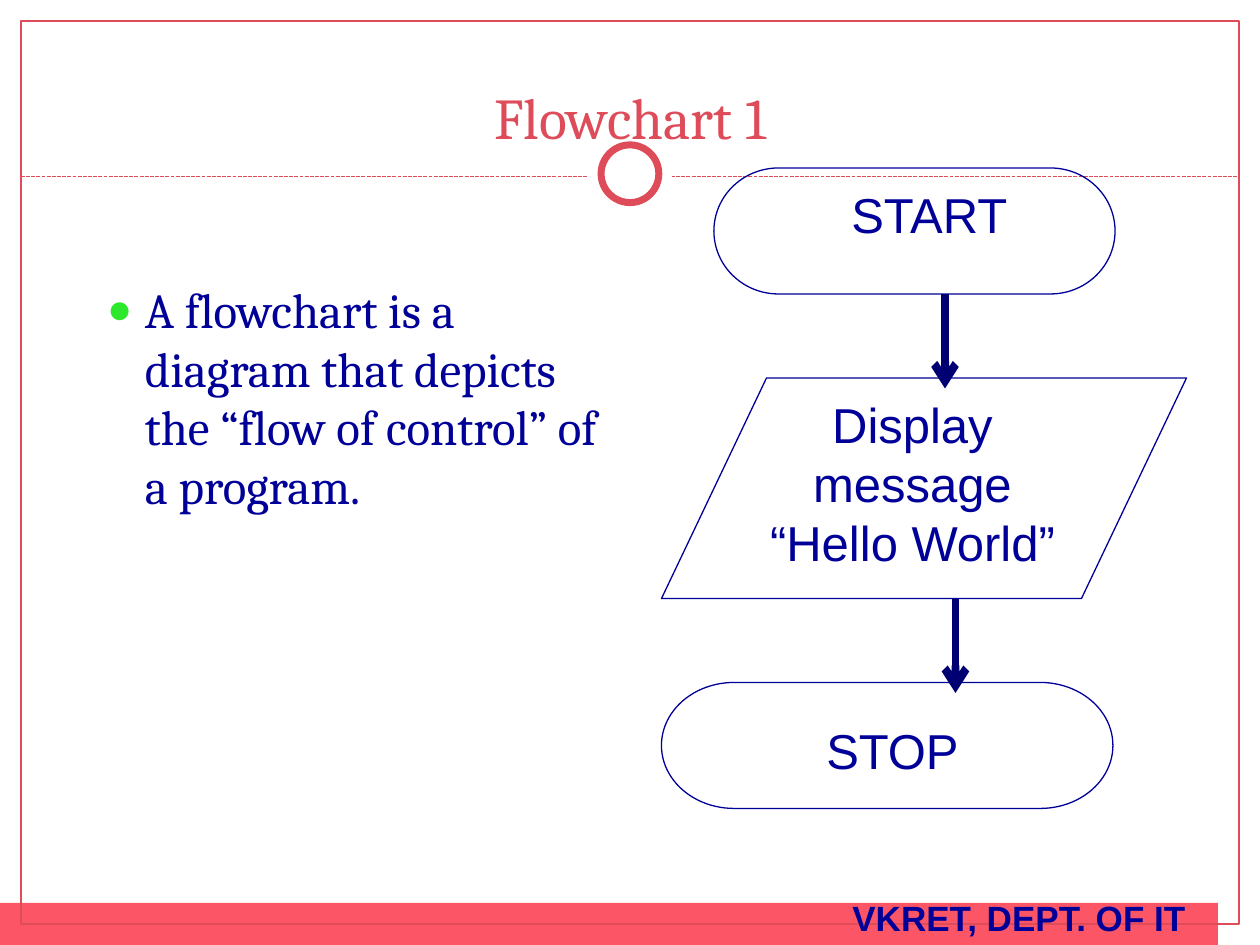
"""Build the "Flowchart 1" slide on a grid of 120 columns by 90 rows."""
import pptx
import pptx.util
import pptx.dml.color
import pptx.enum.dml
import pptx.enum.shapes
import pptx.enum.text
import pptx.oxml
import pptx.oxml.ns

RGBColor = pptx.dml.color.RGBColor
WHITE = RGBColor(0xFF, 0xFF, 0xFF)
RED = RGBColor(0xDE, 0x4C, 0x5A)
BAND = RGBColor(0xFC, 0x56, 0x66)
BLUE = RGBColor(0x00, 0x00, 0x99)
NAVY = RGBColor(0x00, 0x00, 0x72)

MSO = pptx.enum.shapes.MSO_SHAPE
STRAIGHT = pptx.enum.shapes.MSO_CONNECTOR.STRAIGHT
ANCHOR = pptx.enum.text.MSO_ANCHOR
ALIGN = pptx.enum.text.PP_ALIGN
NS = pptx.oxml.ns.nsdecls("a")

prs = pptx.Presentation()
prs.slide_width, prs.slide_height = pptx.util.Inches(10), pptx.util.Inches(7.5)
CELL = prs.slide_width / 120
s = prs.slides.add_slide(prs.slide_layouts[1])
title, body = s.placeholders


def grid(*cells):
    return [round(c * CELL) for c in cells]


def write(sp, text, font, align=ALIGN.LEFT, anchor=ANCHOR.TOP):
    tf = sp.text_frame
    frame = {"word_wrap": True, "vertical_anchor": anchor,
             "auto_size": pptx.enum.text.MSO_AUTO_SIZE.NONE}
    for name, value in frame.items():
        setattr(tf, name, value)
    p = tf.paragraphs[0]
    p.alignment = align
    r = p.add_run()
    r.text = text
    for name, value in font.items():
        if name == "color":
            r.font.color.rgb = value
        else:
            setattr(r.font, name, pptx.util.Pt(value) if name == "size" else value)
    return p


shapes = [
    (MSO.RECTANGLE, (0, 0, 120, 18.2), WHITE, None, 0),
    (MSO.RECTANGLE, (0, 0, 2, 90), WHITE, None, 0),
    (MSO.RECTANGLE, (118, 0, 2, 90), WHITE, None, 0),
    (MSO.RECTANGLE, (0, 86, 116, 4), BAND, None, 0),
    (MSO.RECTANGLE, (2, 2, 116, 86), None, RED, 0.75),
    ("dashed", (2, 16.8, 118, 16.8), None, RED, 0.75),
    (MSO.OVAL, (56, 12.6, 8, 8), WHITE, None, 0),
    (MSO.OVAL, (57.25, 13.8, 5.5, 5.5), WHITE, RED, 4),
    (MSO.FLOWCHART_TERMINATOR, (68, 16, 38.2, 12), None, BLUE, 0.75),
    (MSO.FLOWCHART_DATA, (63, 36, 50, 21), None, BLUE, 0.75),
    (MSO.FLOWCHART_TERMINATOR, (63, 65, 43, 12), None, BLUE, 0.75),
    ("arrow", (90, 28, 90, 37), None, NAVY, 4.5),
    ("arrow", (91, 57, 91, 66), None, NAVY, 4.5),
]
for kind, cells, fill, line, width in shapes:
    if kind in ("dashed", "arrow"):
        sp = s.shapes.add_connector(STRAIGHT, *grid(*cells))
        sp._element.spPr.append(pptx.oxml.parse_xml(f"<a:effectLst {NS}/>"))
    else:
        sp = s.shapes.add_shape(kind, *grid(*cells))
        sp.shadow.inherit = False
        if fill is None:
            sp.fill.background()
        else:
            sp.fill.solid()
            sp.fill.fore_color.rgb = fill
    if line is None:
        sp.line.fill.background()
    else:
        sp.line.color.rgb = line
        sp.line.width = pptx.util.Pt(width)
    if kind == "dashed":
        sp.line.dash_style = pptx.enum.dml.MSO_LINE.SQUARE_DOT
    elif kind == "arrow":
        sp.line._get_or_add_ln().append(
            pptx.oxml.parse_xml(f'<a:tailEnd {NS} type="arrow"/>'))

STEP = {"size": 28, "name": "Arial", "color": BLUE}
labels = [
    ("VKRET, DEPT. OF IT", (80, 84.75, 40, 5.25), {**STEP, "size": 20, "bold": True}, ALIGN.LEFT),
    ("START", (76, 17, 25, 6.8), STEP, ALIGN.CENTER),
    ("Display message “Hello World”", (70, 37, 33.8, 18.1), STEP, ALIGN.CENTER),
    ("STOP", (69, 68, 32, 6.8), STEP, ALIGN.CENTER),
]
for text, cells, font, align in labels:
    write(s.shapes.add_textbox(*grid(*cells)), text, font, align)

for sp, cells in ((title, (4, 3, 112, 12)), (body, (9, 26, 50, 54))):
    sp.left, sp.top, sp.width, sp.height = grid(*cells)
    s.shapes._spTree.append(sp._element)
write(title, "Flowchart 1", {"size": 33, "name": "Cambria", "color": RED},
      ALIGN.CENTER, ANCHOR.BOTTOM)
p = write(body, "A flowchart is a diagram that depicts the “flow of control” of a program.",
          {"size": 28, "name": "Cambria", "color": BLUE})
p.space_before = pptx.util.Pt(5.6)
pPr = p._p.get_or_add_pPr()
indent = pptx.util.Inches(0.3)
for name, value in {"marL": indent, "indent": -indent}.items():
    pPr.set(name, str(value))
for bullet in (f'<a:buClr {NS}><a:srgbClr val="2EE82E"/></a:buClr>',
               f'<a:buSzPct {NS} val="85000"/>',
               f'<a:buFont {NS} typeface="Arial"/>',
               f'<a:buChar {NS} char="●"/>'):
    pPr.append(pptx.oxml.parse_xml(bullet))

prs.save("out.pptx")
